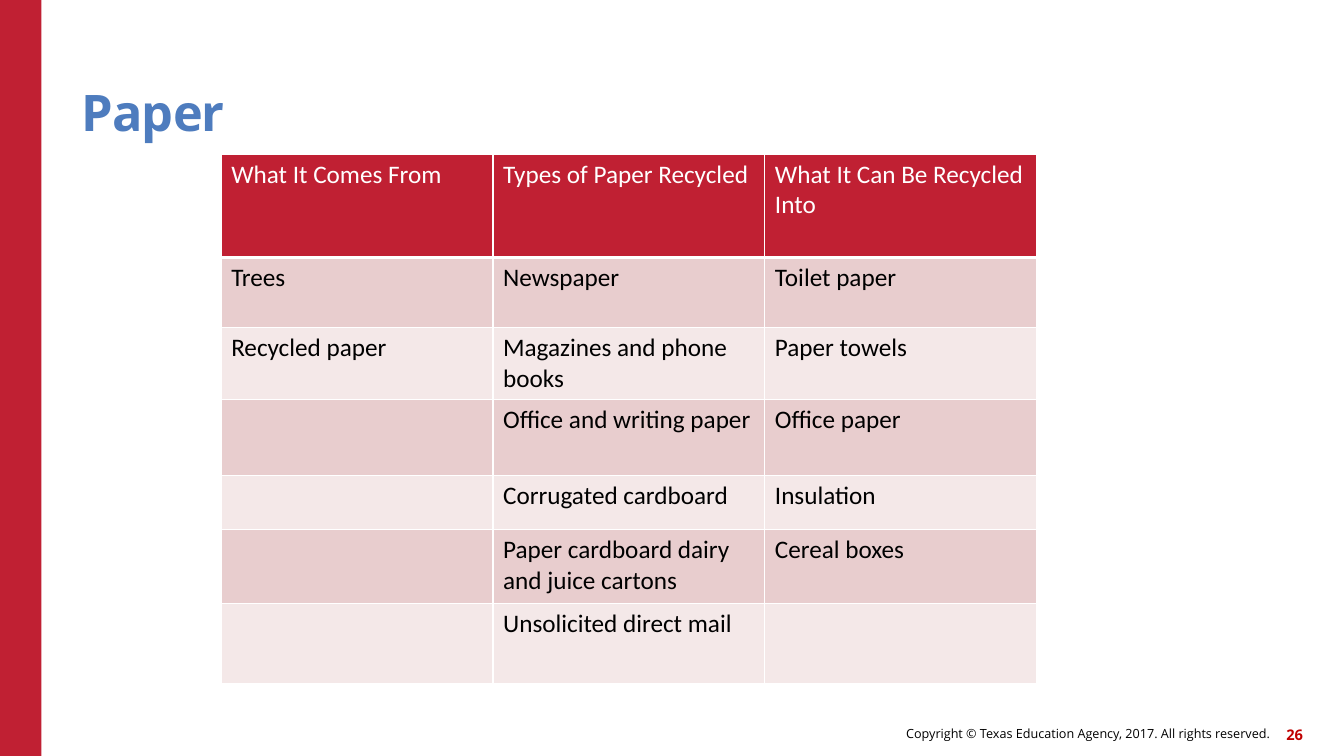
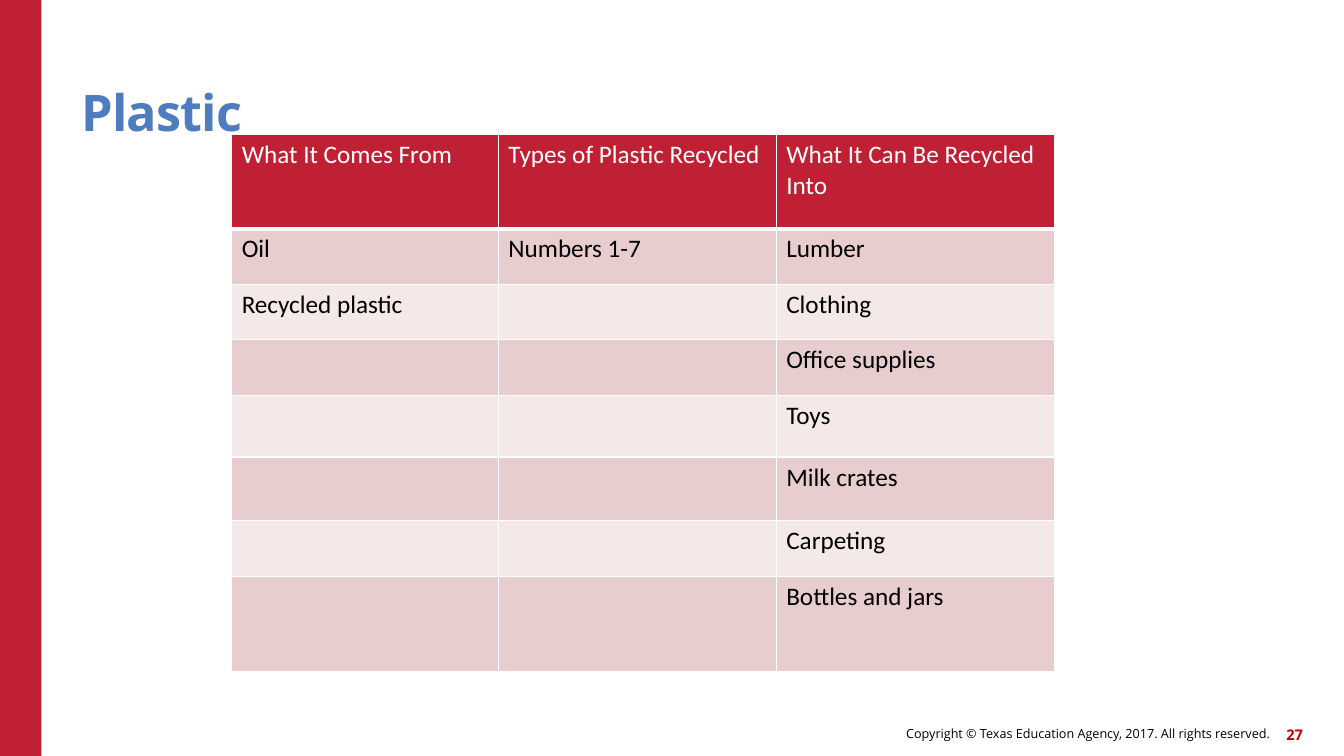
from lxml import etree
from pptx import Presentation
from pptx.dml.color import RGBColor
from pptx.enum.shapes import MSO_SHAPE
from pptx.enum.text import MSO_ANCHOR, PP_ALIGN
from pptx.oxml.ns import qn
from pptx.util import Pt

RECTANGLE = MSO_SHAPE.RECTANGLE
MIDDLE, BOTTOM = MSO_ANCHOR.MIDDLE, MSO_ANCHOR.BOTTOM
LEFT, RIGHT = PP_ALIGN.LEFT, PP_ALIGN.RIGHT

RED = RGBColor(0xC0, 0x20, 0x33)
NUMBER_RED = RGBColor(0xC0, 0x00, 0x00)
BLUE = RGBColor(0x4E, 0x7C, 0xBE)
PINK = RGBColor(0xE8, 0xCD, 0xCE)
PALE_PINK = RGBColor(0xF4, 0xE8, 0xE8)
BLACK = RGBColor(0x00, 0x00, 0x00)
WHITE = RGBColor(0xFF, 0xFF, 0xFF)

SLIDE_WIDTH, SLIDE_HEIGHT = 960, 540
FIRST_PAGE_NUMBER = 26
COPYRIGHT = "Copyright © Texas Education Agency, 2017. All rights reserved."

TITLE = {"name": "Open Sans", "size": Pt(36), "bold": True, "color": BLUE}
FOOTER = {"name": "Open Sans", "size": Pt(9), "color": BLACK}
PAGE_NUMBER = {"name": "Open Sans", "size": Pt(10.5), "bold": True,
               "color": NUMBER_RED}
HEADER_CELL = {"name": "Calibri", "size": Pt(18), "bold": False, "color": WHITE}
BODY_CELL = HEADER_CELL | {"color": BLACK}

MATERIALS = [
    {
        "title": "Paper",
        "position": (158, 110),
        "widths": [194.2, 194.2, 194.2],
        "heights": [74, 50, 51.5, 54.5, 38.5, 52.5, 57.5],
        "rows": [
            ("What It Comes From", "Types of Paper Recycled",
             "What It Can Be Recycled Into"),
            ("Trees", "Newspaper", "Toilet paper"),
            ("Recycled paper", "Magazines and phone books", "Paper towels"),
            ("", "Office and writing paper", "Office paper"),
            ("", "Corrugated cardboard", "Insulation"),
            ("", "Paper cardboard dairy and juice cartons", "Cereal boxes"),
            ("", "Unsolicited direct mail", ""),
        ],
    },
    {
        "title": "Plastic",
        "position": (165.5, 96),
        "widths": [190.5, 198.5, 198.5],
        "heights": [67.5, 39.5, 39.5, 40, 44, 45.5, 40, 67.5],
        "rows": [
            ("What It Comes From", "Types of Plastic Recycled",
             "What It Can Be Recycled Into"),
            ("Oil", "Numbers 1-7", "Lumber"),
            ("Recycled plastic", "", "Clothing"),
            ("", "", "Office supplies"),
            ("", "", "Toys"),
            ("", "", "Milk crates"),
            ("", "", "Carpeting"),
            ("", "", "Bottles and jars"),
        ],
    },
]


def format_font(font, values):
    for name, value in values.items():
        if name == "color":
            font.color.rgb = value
        else:
            setattr(font, name, value)


def add_borders(cell, bottom_width):
    """Draw white borders; call before filling, as lines precede the fill."""
    properties = cell._tc.get_or_add_tcPr()
    widths = {"lnL": 1, "lnR": 1, "lnT": 1, "lnB": bottom_width}
    for tag, width in widths.items():
        line = etree.SubElement(properties, qn(f"a:{tag}"), w=str(Pt(width)))
        fill = etree.SubElement(line, qn("a:solidFill"))
        etree.SubElement(fill, qn("a:srgbClr"), val=str(WHITE))


class RecyclingDeck:
    def __init__(self):
        self.deck = Presentation()
        self.deck.slide_width = Pt(SLIDE_WIDTH)
        self.deck.slide_height = Pt(SLIDE_HEIGHT)
        self.slide = None

    def add_page(self, title, number):
        """Start a slide with the side band, footer, page number and title."""
        self.slide = self.deck.slides.add_slide(self.deck.slide_layouts[6])
        self.add_band()
        self.add_text(COPYRIGHT, (442, 512.6, 465, 23), FOOTER, MIDDLE, RIGHT)
        self.add_text(str(number), (900.7, 513.4, 30, 23), PAGE_NUMBER,
                      MIDDLE, RIGHT)
        para = self.add_text(title, (58.3, 32.4, 792, 69), TITLE, BOTTOM, LEFT)
        para.line_spacing = 0.9
        para.runs[0].font._element.set("spc", "-60")

    def add_band(self):
        band = self.slide.shapes.add_shape(RECTANGLE, 0, 0, Pt(29.5),
                                           Pt(SLIDE_HEIGHT))
        band.shadow.inherit = False
        band.fill.solid()
        band.fill.fore_color.rgb = RED
        band.line.fill.background()

    def add_text(self, text, area, font_values, anchor, alignment):
        box = self.slide.shapes.add_textbox(*map(Pt, area))
        frame = box.text_frame
        frame.word_wrap = True
        frame.vertical_anchor = anchor
        for side in ("left", "top", "right", "bottom"):
            setattr(frame, f"margin_{side}", 0)
        para = frame.paragraphs[0]
        para.alignment = alignment
        span = para.add_run()
        span.text = text
        format_font(span.font, font_values)
        return para

    def add_table(self, position, widths, heights, rows):
        size = sum(widths), sum(heights)
        table = self.slide.shapes.add_table(
            len(rows), len(widths), *map(Pt, (*position, *size))).table
        table.horz_banding = False
        for column, width in zip(table.columns, widths):
            column.width = Pt(width)
        for row, height in zip(table.rows, heights):
            row.height = Pt(height)
        for row_index, texts in enumerate(rows):
            is_header = row_index == 0
            band_color = PINK if row_index % 2 else PALE_PINK
            for column_index, text in enumerate(texts):
                cell = table.cell(row_index, column_index)
                add_borders(cell, 3 if is_header else 1)
                cell.fill.solid()
                cell.fill.fore_color.rgb = RED if is_header else band_color
                if text:
                    span = cell.text_frame.paragraphs[0].add_run()
                    span.text = text
                    format_font(span.font,
                                HEADER_CELL if is_header else BODY_CELL)


def main():
    recycling = RecyclingDeck()
    for number, material in enumerate(MATERIALS, FIRST_PAGE_NUMBER):
        recycling.add_page(material["title"], number)
        recycling.add_table(material["position"], material["widths"],
                            material["heights"], material["rows"])
    recycling.deck.save("out.pptx")


if __name__ == "__main__":
    main()
